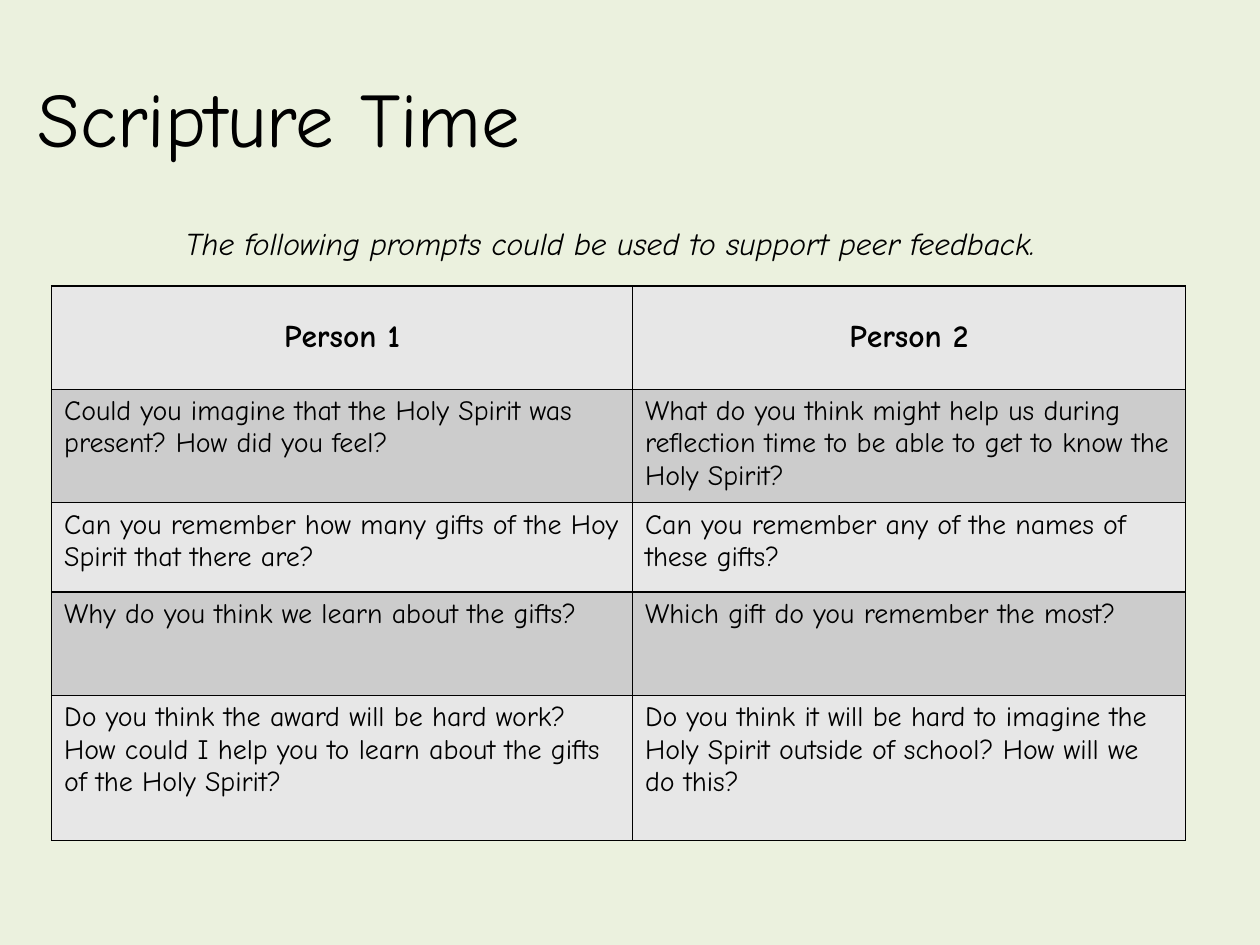
import pptx
import pptx.util
import pptx.dml.color
import pptx.enum.text
import pptx.oxml
import pptx.oxml.ns

Inches, Pt = pptx.util.Inches, pptx.util.Pt
RGBColor = pptx.dml.color.RGBColor
Align = pptx.enum.text.PP_ALIGN
Anchor = pptx.enum.text.MSO_ANCHOR

FONT = "Comic Neue"
CREAM = RGBColor(0xEB, 0xF1, 0xDE)
BLACK = RGBColor(0, 0, 0)
LIGHT = RGBColor(0xE7, 0xE7, 0xE7)
DARK = RGBColor(0xCC, 0xCC, 0xCC)


def write(frame, text, size, align=Align.LEFT, bold=False, italic=False):
    frame.word_wrap = True
    frame.text = text
    par = frame.paragraphs[0]
    par.alignment = align
    font = par.runs[0].font
    font.name, font.size = FONT, Pt(size)
    font.bold, font.italic = bold, italic
    font.color.rgb = BLACK


def border(cell):
    """Draw a 1 pt line on all four sides; call before the cell is filled."""
    props = cell._tc.get_or_add_tcPr()
    for side in "LRTB":
        props.append(pptx.oxml.parse_xml(
            f'<a:ln{side} {pptx.oxml.ns.nsdecls("a")} w="{Pt(1)}">'
            f'<a:solidFill><a:srgbClr val="{BLACK}"/></a:solidFill>'
            f'</a:ln{side}>'))


deck = pptx.Presentation()
deck.slide_width, deck.slide_height = Inches(10), Inches(7.5)
slide = deck.slides.add_slide(deck.slide_layouts[6])
slide.background.fill.solid()
slide.background.fill.fore_color.rgb = CREAM

title = slide.shapes.add_textbox(
    Inches(0.2), Inches(0.3), Inches(9.3), Inches(1.25))
write(title.text_frame, "Scripture Time", 44)
title.text_frame.vertical_anchor = Anchor.MIDDLE

prompts = [
    ("Person 1", "Person 2"),
    ("Could you imagine that the Holy Spirit was present? How did you feel?",
     "What do you think might help us during reflection time to be able to "
     "get to know the Holy Spirit?"),
    ("Can you remember how many gifts of the Hoy Spirit that there are?",
     "Can you remember any of the names of these gifts?"),
    ("Why do you think we learn about the gifts?",
     "Which gift do you remember the most?"),
    ("Do you think the award will be hard work? How could I help you to "
     "learn about the gifts of the Holy Spirit?",
     "Do you think it will be hard to imagine the Holy Spirit outside of "
     "school? How will we do this?"),
]
widths = [4.61, 4.39]
heights = [0.82, 0.82, 0.71, 0.82, 1.15]

table = slide.shapes.add_table(
    len(prompts), len(widths), Inches(0.41), Inches(2.27),
    Inches(sum(widths)), Inches(sum(heights))).table
for col, width in zip(table.columns, widths):
    col.width = Inches(width)
for row, height in zip(table.rows, heights):
    row.height = Inches(height)

for r, pair in enumerate(prompts):
    for c, text in enumerate(pair):
        cell = table.cell(r, c)
        if r == 0:
            write(cell.text_frame, text, 18, Align.CENTER, bold=True)
            cell.vertical_anchor = Anchor.MIDDLE
        else:
            write(cell.text_frame, text, 16)
        border(cell)
        cell.fill.solid()
        cell.fill.fore_color.rgb = DARK if r % 2 else LIGHT

intro = slide.shapes.add_textbox(
    Inches(0.6), Inches(1.73), Inches(8.49), Inches(0.4))
write(intro.text_frame,
      "The following prompts could be used to support peer feedback.",
      18, Align.CENTER, italic=True)
intro.text_frame.auto_size = pptx.enum.text.MSO_AUTO_SIZE.SHAPE_TO_FIT_TEXT

deck.save("out.pptx")
